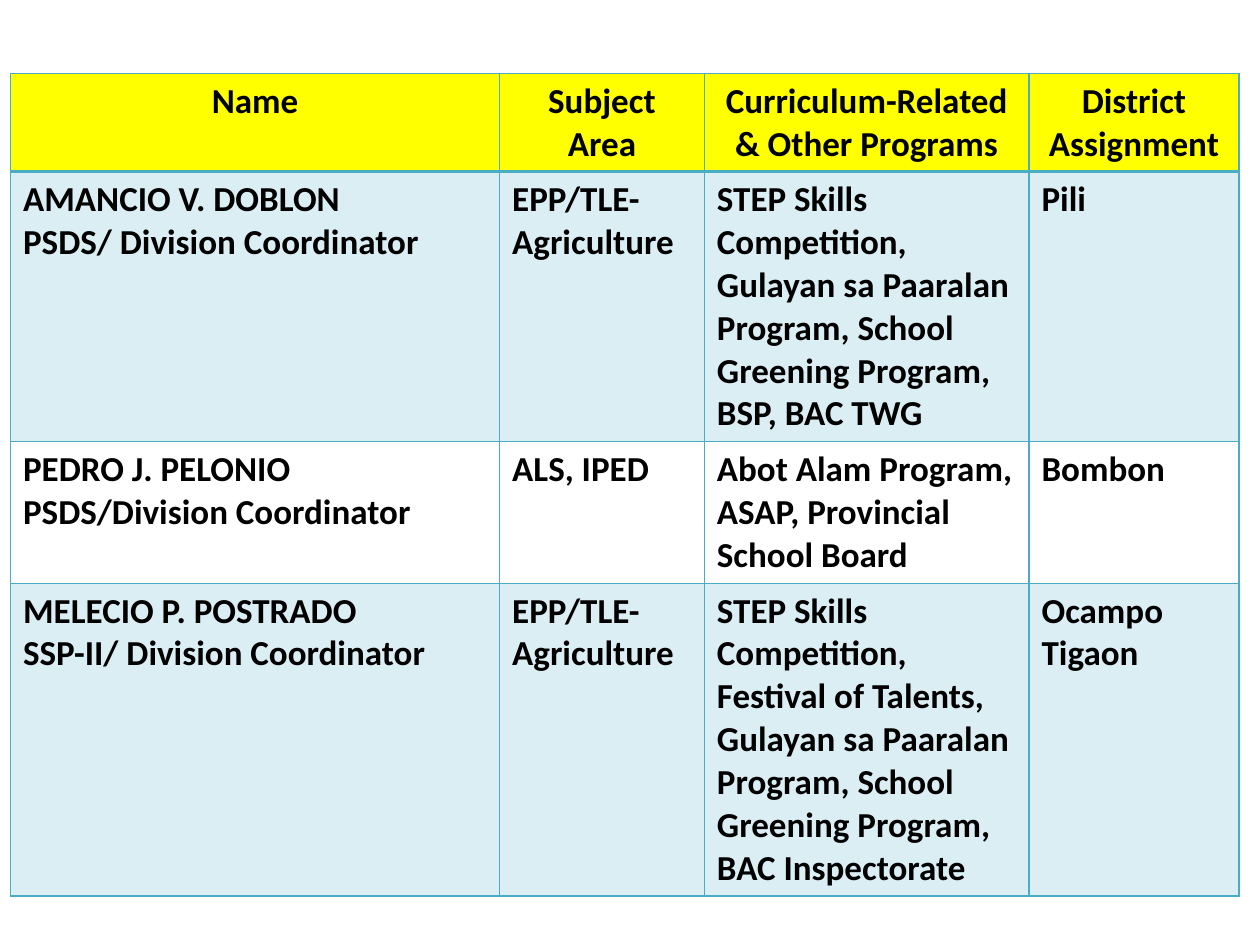
from dataclasses import dataclass

import pptx
import pptx.dml.color
import pptx.enum.text
import pptx.oxml
import pptx.oxml.ns
import pptx.util

Pt = pptx.util.Pt
RGB = pptx.dml.color.RGBColor.from_string


@dataclass(frozen=True)
class Theme:
    font: str = "Calibri"
    size: int = 20
    text: str = "000000"
    header: str = "FFFF00"
    accent: str = "4BACC6"
    band_opacity: int = 20
    line: int = 1
    header_line: int = 2


THEME = Theme()
LEFT, TOP = 6, 42
COLUMN_WIDTHS = [279.5, 117, 185.5, 120]
ROW_HEIGHTS = [56, 154, 81, 178]

# A newline separates paragraphs within a cell.
ROWS = [
    ["Name", "Subject Area", "Curriculum-Related & Other Programs", "District Assignment"],
    ["AMANCIO V. DOBLON\nPSDS/ Division Coordinator",
     "EPP/TLE-Agriculture",
     "STEP Skills Competition, Gulayan sa Paaralan Program, "
     "School Greening Program, BSP, BAC TWG",
     "Pili"],
    ["PEDRO J. PELONIO\nPSDS/Division Coordinator",
     "ALS, IPED",
     "Abot Alam Program, ASAP, Provincial School Board",
     "Bombon"],
    ["MELECIO P. POSTRADO\nSSP-II/ Division Coordinator",
     "EPP/TLE-Agriculture",
     "STEP Skills Competition, Festival of Talents, Gulayan sa Paaralan Program, "
     "School Greening Program, BAC Inspectorate",
     "Ocampo\nTigaon"],
]


def write_cell(cell, text, align):
    tf = cell.text_frame
    for i, line in enumerate(text.split("\n")):
        p = tf.paragraphs[0] if i == 0 else tf.add_paragraph()
        p.alignment = align
        r = p.add_run()
        r.text = line
        r.font.name = THEME.font
        r.font.size = Pt(THEME.size)
        r.font.bold = True
        r.font.color.rgb = RGB(THEME.text)


def border_cell(cell, top, bottom):
    """Draw all four borders; call before filling, as the schema puts lines first."""
    tc_pr = cell._tc.get_or_add_tcPr()
    widths = {"L": THEME.line, "R": THEME.line, "T": top, "B": bottom}
    for side, width in widths.items():
        tc_pr.append(pptx.oxml.parse_xml(
            f'<a:ln{side} {pptx.oxml.ns.nsdecls("a")} w="{Pt(width)}">'
            f'<a:solidFill><a:srgbClr val="{THEME.accent}"/></a:solidFill>'
            f'</a:ln{side}>'))


def fill_cell(cell, row):
    """Yellow header, then tinted and clear rows in turn."""
    if row and row % 2 == 0:
        cell.fill.background()
        return
    cell.fill.solid()
    cell.fill.fore_color.rgb = RGB(THEME.accent if row else THEME.header)
    if row:
        color = cell._tc.tcPr.find(pptx.oxml.ns.qn("a:solidFill"))[0]
        color.append(pptx.oxml.parse_xml(
            f'<a:alpha {pptx.oxml.ns.nsdecls("a")} val="{THEME.band_opacity * 1000}"/>'))


def add_assignment_table(s):
    frame = s.shapes.add_table(
        len(ROWS), len(COLUMN_WIDTHS), Pt(LEFT), Pt(TOP),
        Pt(sum(COLUMN_WIDTHS)), Pt(sum(ROW_HEIGHTS)))
    table = frame.table
    table.horz_banding = False
    for column, width in zip(table.columns, COLUMN_WIDTHS):
        column.width = Pt(width)
    for i, (row, height) in enumerate(zip(table.rows, ROW_HEIGHTS)):
        row.height = Pt(height)
        align = pptx.enum.text.PP_ALIGN.LEFT if i else pptx.enum.text.PP_ALIGN.CENTER
        top = THEME.header_line if i == 1 else THEME.line
        bottom = THEME.header_line if i == 0 else THEME.line
        for cell, text in zip(row.cells, ROWS[i]):
            write_cell(cell, text, align)
            border_cell(cell, top, bottom)
            fill_cell(cell, i)


def main():
    prs = pptx.Presentation()
    prs.slide_width, prs.slide_height = Pt(720), Pt(540)
    s = prs.slides.add_slide(prs.slide_layouts[6])
    add_assignment_table(s)
    prs.save("out.pptx")


if __name__ == "__main__":
    main()
